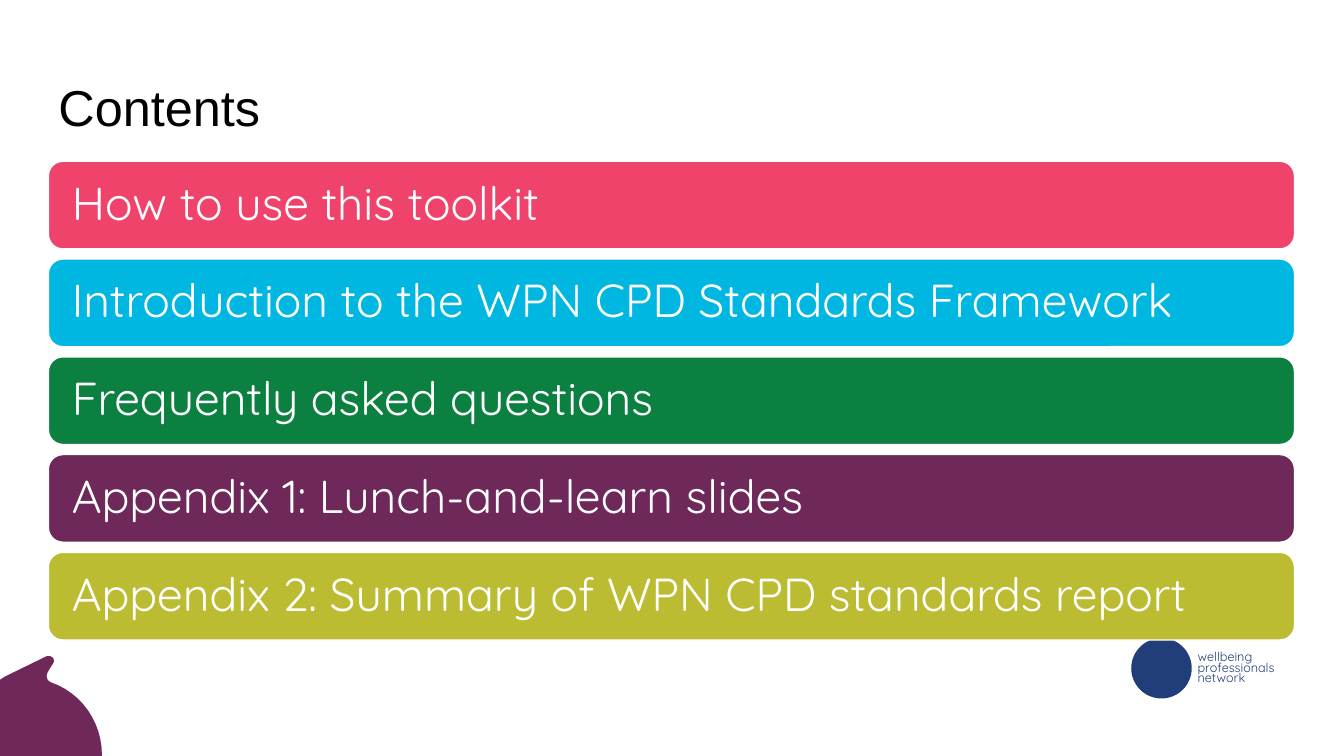
from pptx import Presentation
from pptx.dml.color import RGBColor
from pptx.enum.shapes import MSO_SHAPE as Shape
from pptx.enum.text import MSO_ANCHOR as Anchor, MSO_AUTO_SIZE as AutoSize, PP_ALIGN as Align
from pptx.util import Inches, Pt

PINK = RGBColor(0xEF, 0x43, 0x6B)
CYAN = RGBColor(0x00, 0xB7, 0xE2)
GREEN = RGBColor(0x0B, 0x80, 0x40)
PURPLE = RGBColor(0x6E, 0x29, 0x5A)
OLIVE = RGBColor(0xBC, 0xBC, 0x33)
NAVY = RGBColor(0x21, 0x3E, 0x7A)
WHITE = RGBColor(0xFF, 0xFF, 0xFF)
BLACK = RGBColor(0, 0, 0)

CONTENTS = [
    ("How to use this toolkit", PINK),
    ("Introduction to the WPN CPD Standards Framework", CYAN),
    ("Frequently asked questions", GREEN),
    ("Appendix 1: Lunch-and-learn slides", PURPLE),
    ("Appendix 2: Summary of WPN CPD standards report", OLIVE),
]
BAR_TOP, BAR_STEP = 1.6, 0.97

# Each segment is two control points and an end point; straight edges follow.
BUBBLE_START = (0.48, 6.53)
BUBBLE_CURVES = [
    ((0.51, 6.53), (0.52, 6.55), (0.51, 6.57)),
    ((0.49, 6.6), (0.47, 6.63), (0.45, 6.67)),
    ((0.43, 6.72), (0.45, 6.77), (0.5, 6.79)),
    ((0.79, 6.89), (0.99, 7.17), (0.99, 7.49)),
]
BUBBLE_EDGES = [(0.99, 7.5), (0, 7.5), (0, 6.77), (0.06, 6.73), (0.47, 6.53)]


def curve_points(start, curves, steps=12):
    """Sample a chain of cubic Bezier segments."""
    points = []
    for first, second, end in curves:
        for step in range(1, steps + 1):
            t = step / steps
            u = 1 - t
            points.append(tuple(
                u**3 * a + 3 * u**2 * t * b + 3 * u * t**2 * c + t**3 * d
                for a, b, c, d in zip(start, first, second, end)))
        start = end
    return points


def paint(shape, fill, line=None, width=1):
    shape.shadow.inherit = False
    shape.fill.solid()
    shape.fill.fore_color.rgb = fill
    if line is None:
        shape.line.fill.background()
    else:
        shape.line.color.rgb = line
        shape.line.width = Pt(width)


def write(frame, text, *, size, color, font="Quicksand", spacing=0.9,
          anchor=Anchor.MIDDLE):
    frame.vertical_anchor = anchor
    frame.text = text
    for para in frame.paragraphs:
        para.alignment = Align.LEFT
        para.line_spacing = spacing
        for span in para.runs:
            span.font.name = font
            span.font.size = Pt(size)
            span.font.color.rgb = color


def add_title(page, text):
    title = page.shapes.title
    title.left, title.top = Inches(0.48), Inches(0.72)
    title.width, title.height = Inches(12.38), Inches(0.69)
    write(title.text_frame, text, size=36, color=BLACK, font="Arial", anchor=Anchor.BOTTOM)
    title.text_frame.auto_size = AutoSize.NONE


def add_bar(page, top, text, color):
    bar = page.shapes.add_shape(
        Shape.ROUNDED_RECTANGLE, Inches(0.48), Inches(top), Inches(12.36), Inches(0.87))
    paint(bar, color, line=WHITE)
    frame = bar.text_frame
    frame.margin_left = frame.margin_right = Inches(0.19)
    write(frame, text, size=33, color=WHITE)


def add_corner_bubble(page):
    builder = page.shapes.build_freeform(*map(Inches, BUBBLE_START), scale=1.0)
    points = curve_points(BUBBLE_START, BUBBLE_CURVES) + BUBBLE_EDGES
    builder.add_line_segments([(Inches(x), Inches(y)) for x, y in points])
    paint(builder.convert_to_shape(), PURPLE, line=PURPLE, width=3)


def add_association_mark(page):
    disc = page.shapes.add_shape(
        Shape.OVAL, Inches(11.22), Inches(6.33), Inches(0.6), Inches(0.6))
    paint(disc, NAVY)
    label = page.shapes.add_textbox(Inches(11.78), Inches(6.43), Inches(1.18), Inches(0.42))
    label.text_frame.word_wrap = False
    write(label.text_frame, "wellbeing\nprofessionals\nnetwork", size=9, color=NAVY,
          spacing=0.7, anchor=Anchor.TOP)


def main():
    deck = Presentation()
    deck.slide_width, deck.slide_height = Inches(13.33), Inches(7.5)
    page = deck.slides.add_slide(deck.slide_layouts[5])
    add_association_mark(page)
    add_corner_bubble(page)
    add_title(page, "Contents")
    for row, (text, color) in enumerate(CONTENTS):
        add_bar(page, BAR_TOP + row * BAR_STEP, text, color)
    deck.save("out.pptx")


if __name__ == "__main__":
    main()
